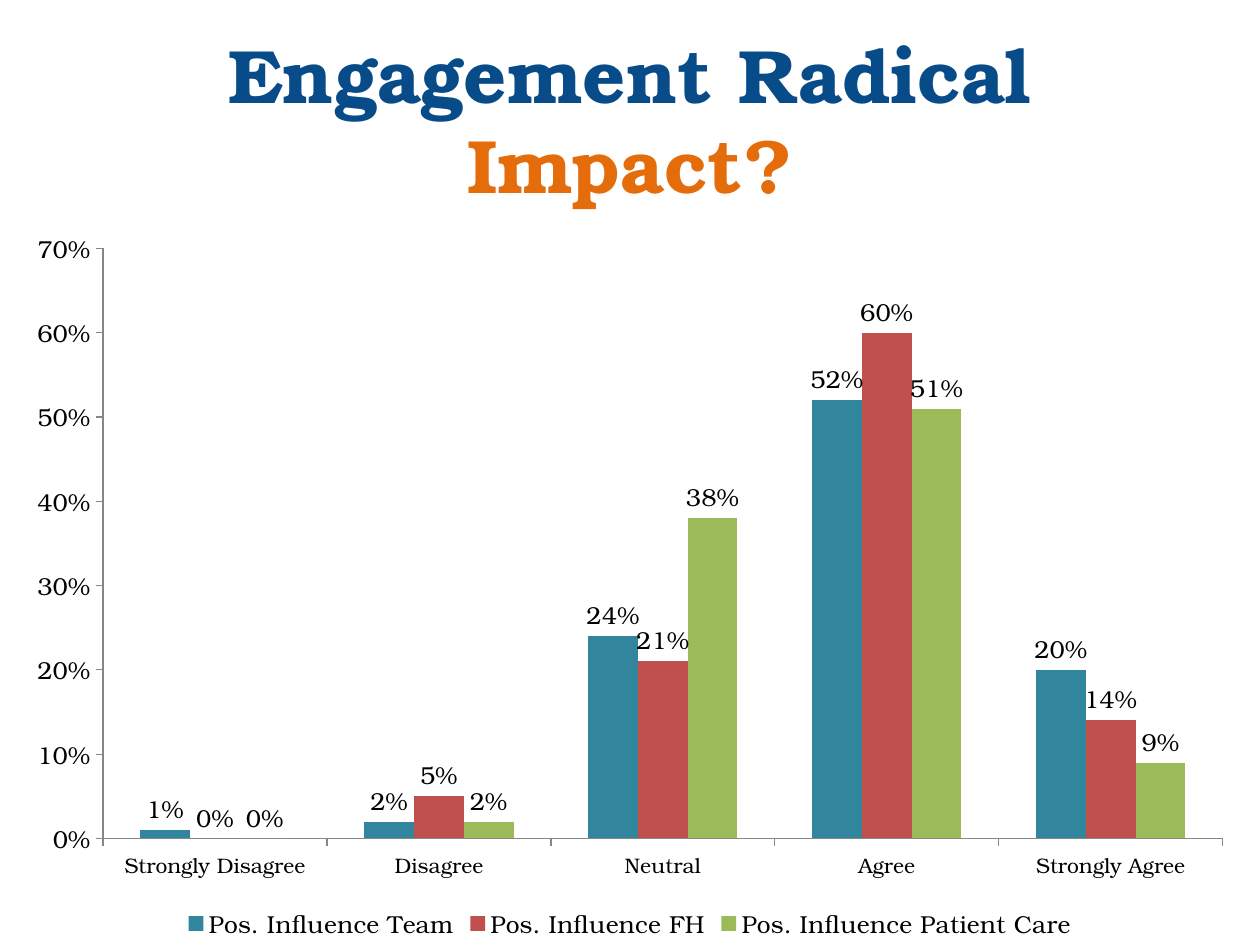
from pptx import Presentation
from pptx import util as u
from pptx.chart.data import CategoryChartData
from pptx.dml.color import RGBColor
from pptx.enum import chart as ch, text

COLOURS = {
    "background": "FFFFFF",
    "ink": "000000",
    "axis": "868686",
    "navy": "074B88",
    "orange": "E46C0A",
    "team": "31859C",
    "hospital": "C0504D",
    "patient": "9BBB59",
}


def rgb(name):
    return RGBColor.from_string(COLOURS[name])


class SurveySlide:
    font = "TeX Gyre Bonum"
    percent = "0%"

    def __init__(self, deck):
        self.width, self.height = deck.slide_width, deck.slide_height
        self.slide = deck.slides.add_slide(deck.slide_layouts[6])
        fill = self.slide.background.fill
        fill.solid()
        fill.fore_color.rgb = rgb("background")

    def box(self, left, top, width, height):
        return (int(left * self.width), int(top * self.height),
                int(width * self.width), int(height * self.height))

    def style(self, font, size, colour, bold=False):
        font.name, font.size, font.bold = self.font, u.Pt(size), bold
        font.color.rgb = rgb(colour)

    def title(self, runs, area, size):
        frame = self.slide.shapes.add_textbox(*self.box(*area)).text_frame
        frame.word_wrap = True
        frame.vertical_anchor = text.MSO_ANCHOR.MIDDLE
        paragraph = frame.paragraphs[0]
        paragraph.alignment = text.PP_ALIGN.CENTER
        for words, colour in runs:
            run = paragraph.add_run()
            run.text = words
            self.style(run.font, size, colour, bold=True)

    def axis(self, axis, size):
        axis.has_major_gridlines = False
        axis.major_tick_mark = ch.XL_TICK_MARK.OUTSIDE
        axis.minor_tick_mark = ch.XL_TICK_MARK.NONE
        axis.format.line.color.rgb = rgb("axis")
        axis.format.line.width = u.Pt(0.75)
        self.style(axis.tick_labels.font, size, "ink")

    def columns(self, answers, influences, area):
        data = CategoryChartData(number_format=self.percent)
        data.categories = answers
        for name, _, shares in influences:
            data.add_series(name, shares)
        chart = self.slide.shapes.add_chart(
            ch.XL_CHART_TYPE.COLUMN_CLUSTERED, *self.box(*area), data).chart
        self.style(chart.font, 14, "ink")
        chart.has_title = False
        chart.has_legend = True
        chart.legend.position = ch.XL_LEGEND_POSITION.BOTTOM
        chart.legend.include_in_layout = False
        self.style(chart.legend.font, 14, "ink")

        self.axis(chart.category_axis, 12)
        shares_axis = chart.value_axis
        self.axis(shares_axis, 14)
        shares_axis.minimum_scale, shares_axis.maximum_scale = 0, 0.7
        shares_axis.major_unit = 0.1
        shares_axis.tick_labels.number_format = self.percent
        shares_axis.tick_labels.number_format_is_linked = False

        plot = chart.plots[0]
        plot.gap_width, plot.overlap = 150, 0
        plot.vary_by_categories = False
        for series, (_, colour, _) in zip(plot.series, influences):
            series.format.fill.solid()
            series.format.fill.fore_color.rgb = rgb(colour)
            labels = series.data_labels
            labels.show_value = True
            labels.number_format = self.percent
            labels.number_format_is_linked = False
            labels.position = ch.XL_LABEL_POSITION.OUTSIDE_END
            self.style(labels.font, 14, "ink")


def main():
    deck = Presentation()
    deck.slide_width, deck.slide_height = u.Inches(10), u.Inches(7.5)
    survey = SurveySlide(deck)
    survey.columns(
        ["Strongly Disagree", "Disagree", "Neutral", "Agree", "Strongly Agree"],
        [
            ("Pos. Influence Team", "team", (0.01, 0.02, 0.24, 0.52, 0.2)),
            ("Pos. Influence FH", "hospital", (0, 0.05, 0.21, 0.6, 0.14)),
            ("Pos. Influence Patient Care", "patient", (0, 0.02, 0.38, 0.51, 0.09)),
        ],
        area=(0.01, 0.23, 0.98, 0.77),
    )
    survey.title([("Engagement Radical ", "navy"), ("Impact?", "orange")],
                 area=(0.05, 0.04, 0.9, 0.17), size=43.2)
    deck.save("out.pptx")


if __name__ == "__main__":
    main()
